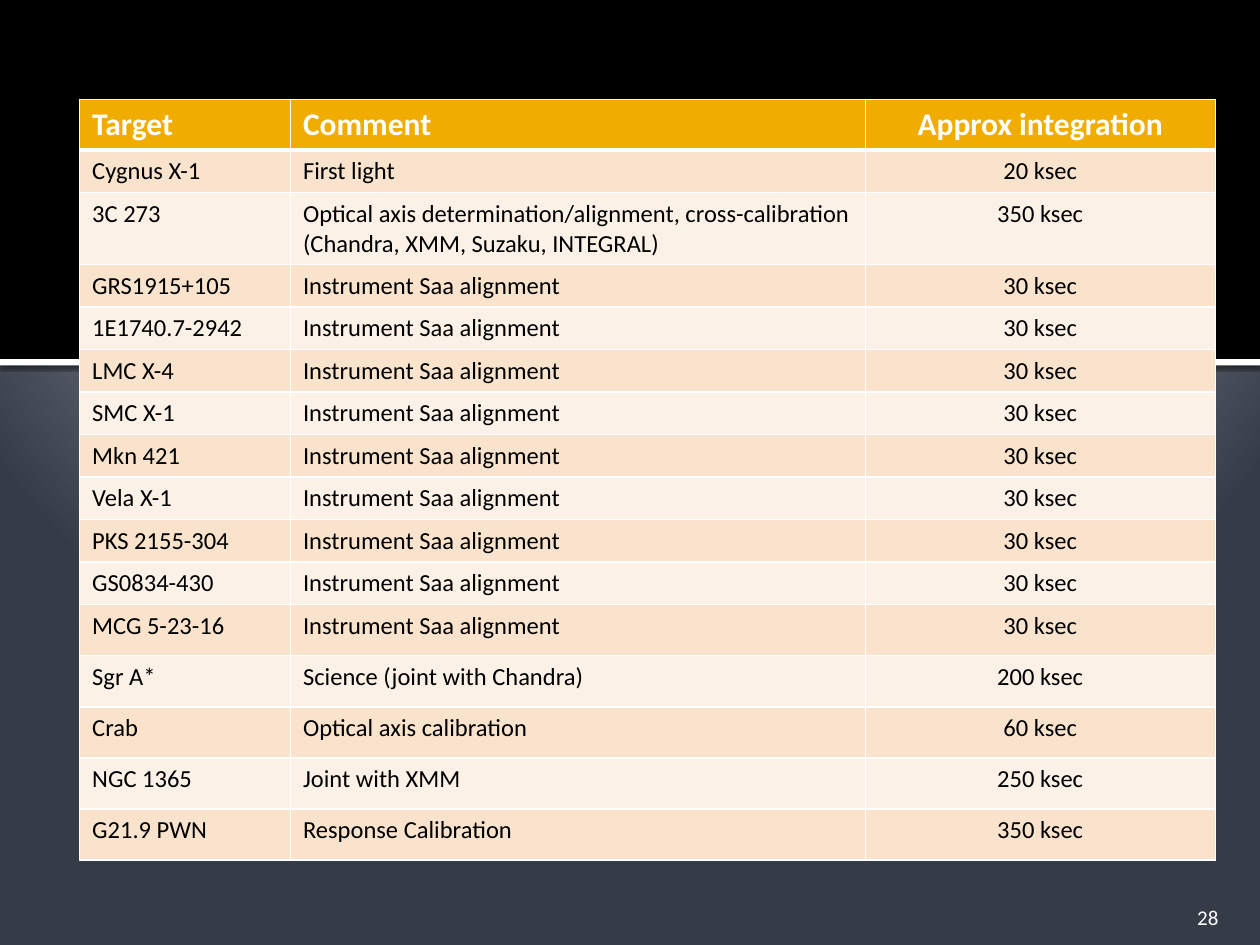
from dataclasses import dataclass

from lxml.etree import SubElement
from pptx import Presentation
from pptx.dml.color import RGBColor
from pptx.enum.shapes import MSO_SHAPE
from pptx.enum.text import MSO_ANCHOR, PP_ALIGN
from pptx.oxml import parse_xml
from pptx.oxml.ns import nsdecls, qn
from pptx.shapes.autoshape import Shape
from pptx.slide import Slide
from pptx.table import _Cell
from pptx.text.text import TextFrame
from pptx.util import Pt

FONT = "Calibri"
BLACK = RGBColor(0x00, 0x00, 0x00)
WHITE = RGBColor(0xFF, 0xFF, 0xFF)
AMBER = RGBColor(0xF0, 0xAD, 0x00)
PEACH = RGBColor(0xF9, 0xE3, 0xCC)
CREAM = RGBColor(0xFC, 0xF1, 0xE7)
MIST = RGBColor(0xC1, 0xC5, 0xD3)
HAZE = RGBColor(0xBF, 0xC4, 0xD2)
SLATE = RGBColor(0x35, 0x3B, 0x47)
BACKDROP_STOPS = [(0, MIST), (12, MIST), (20, HAZE), (100, SLATE)]
HEADINGS = ("Target", "Comment", "Approx integration")
COLUMN_WIDTHS = (120.5, 328.5, 200)
COLUMN_ALIGNS = (PP_ALIGN.LEFT, PP_ALIGN.LEFT, PP_ALIGN.CENTER)
HEADER_HEIGHT = 29
ROW_HEIGHT = 24.3
TALL_ROW = 29.2
ALIGNMENT = "Instrument Saa alignment"


@dataclass(frozen=True)
class Observation:
    target: str
    comment: str = ALIGNMENT
    ksec: int = 30
    height: float = ROW_HEIGHT


OBSERVATIONS = [
    Observation("Cygnus X-1", "First light", 20),
    Observation(
        "3C 273",
        "Optical axis determination/alignment, cross-calibration "
        "(Chandra, XMM, Suzaku, INTEGRAL)",
        350,
        41.1,
    ),
    Observation("GRS1915+105"),
    Observation("1E1740.7-2942"),
    Observation("LMC X-4"),
    Observation("SMC X-1"),
    Observation("Mkn 421"),
    Observation("Vela X-1"),
    Observation("PKS 2155-304"),
    Observation("GS0834-430"),
    Observation("MCG 5-23-16", height=TALL_ROW),
    Observation("Sgr A*", "Science (joint with Chandra)", 200, TALL_ROW),
    Observation("Crab", "Optical axis calibration", 60, TALL_ROW),
    Observation("NGC 1365", "Joint with XMM", 250, TALL_ROW),
    Observation("G21.9 PWN", "Response Calibration", 350, TALL_ROW),
]


def set_text(tf: TextFrame, text: str, size: float, color: RGBColor,
             align: PP_ALIGN, bold: bool = False) -> None:
    tf.text = text
    p = tf.paragraphs[0]
    p.alignment = align
    font = p.runs[0].font
    font.name = FONT
    font.size = Pt(size)
    font.bold = bold
    font.color.rgb = color


def set_backdrop(s: Slide) -> None:
    s.background.fill.solid()
    stops = "".join(
        f'<a:gs pos="{pos * 1000}"><a:srgbClr val="{color}"/></a:gs>'
        for pos, color in BACKDROP_STOPS
    )
    gradient = parse_xml(
        f'<a:gradFill {nsdecls("a")} rotWithShape="1"><a:gsLst>{stops}</a:gsLst>'
        '<a:path path="circle">'
        '<a:fillToRect l="10000" t="-25000" r="10000" b="125000"/>'
        "</a:path></a:gradFill>"
    )
    solid = s.element.find(".//" + qn("p:bgPr")).find(qn("a:solidFill"))
    solid.getparent().replace(solid, gradient)


def add_band(s: Slide, top: float, height: float, color: RGBColor) -> Shape:
    sp = s.shapes.add_shape(MSO_SHAPE.RECTANGLE, Pt(0), Pt(top), Pt(720), Pt(height))
    sp.fill.solid()
    sp.fill.fore_color.rgb = color
    sp.line.fill.background()
    sp.shadow.inherit = False
    return sp


def add_shadow(sp: Shape) -> None:
    effects = sp.element.spPr.find(qn("a:effectLst"))
    effects.append(parse_xml(
        f'<a:outerShdw {nsdecls("a")} blurRad="{Pt(2.5)}" dist="{Pt(0.8)}" '
        f'dir="5400000"><a:srgbClr val="{BLACK}"><a:alpha val="60000"/>'
        "</a:srgbClr></a:outerShdw>"
    ))


def set_borders(cell: _Cell, top: float = 1, bottom: float = 1) -> None:
    tc_pr = cell._tc.get_or_add_tcPr()
    widths = {"lnL": 1, "lnR": 1, "lnT": top, "lnB": bottom}
    for i, (side, width) in enumerate(widths.items()):
        ln = SubElement(tc_pr, qn(f"a:{side}"), w=str(Pt(width)))
        SubElement(SubElement(ln, qn("a:solidFill")), qn("a:srgbClr"), val=str(WHITE))
        tc_pr.insert(i, ln)


def add_observation_table(s: Slide) -> None:
    heights = [HEADER_HEIGHT] + [o.height for o in OBSERVATIONS]
    table = s.shapes.add_table(
        len(heights), len(HEADINGS), Pt(45.5), Pt(56.8),
        Pt(sum(COLUMN_WIDTHS)), Pt(sum(heights)),
    ).table
    for column, width in zip(table.columns, COLUMN_WIDTHS):
        column.width = Pt(width)
    rows = [HEADINGS] + [(o.target, o.comment, f"{o.ksec} ksec") for o in OBSERVATIONS]
    for i, (texts, height) in enumerate(zip(rows, heights)):
        table.rows[i].height = Pt(height)
        header = i == 0
        fill = AMBER if header else (CREAM, PEACH)[i % 2]
        for j, (text, align) in enumerate(zip(texts, COLUMN_ALIGNS)):
            cell = table.cell(i, j)
            set_text(cell.text_frame, text, 18 if header else 14,
                     WHITE if header else BLACK, align, header)
            cell.fill.solid()
            cell.fill.fore_color.rgb = fill
            set_borders(cell, 3 if i == 1 else 1, 3 if header else 1)


def add_page_number(s: Slide, number: int) -> None:
    box = s.shapes.add_textbox(Pt(645.8), Pt(509.8), Pt(57.6), Pt(21.6))
    tf = box.text_frame
    tf.word_wrap = True
    tf.vertical_anchor = MSO_ANCHOR.BOTTOM
    tf.margin_bottom = Pt(0)
    set_text(tf, str(number), 12, WHITE, PP_ALIGN.RIGHT)


def main() -> None:
    prs = Presentation()
    prs.slide_width, prs.slide_height = Pt(720), Pt(540)
    s = prs.slides.add_slide(prs.slide_layouts[6])
    set_backdrop(s)
    add_band(s, 0, 205.2, BLACK)
    add_shadow(add_band(s, 205.2, 3.6, WHITE))
    add_page_number(s, 28)
    add_observation_table(s)
    prs.save("out.pptx")


if __name__ == "__main__":
    main()
